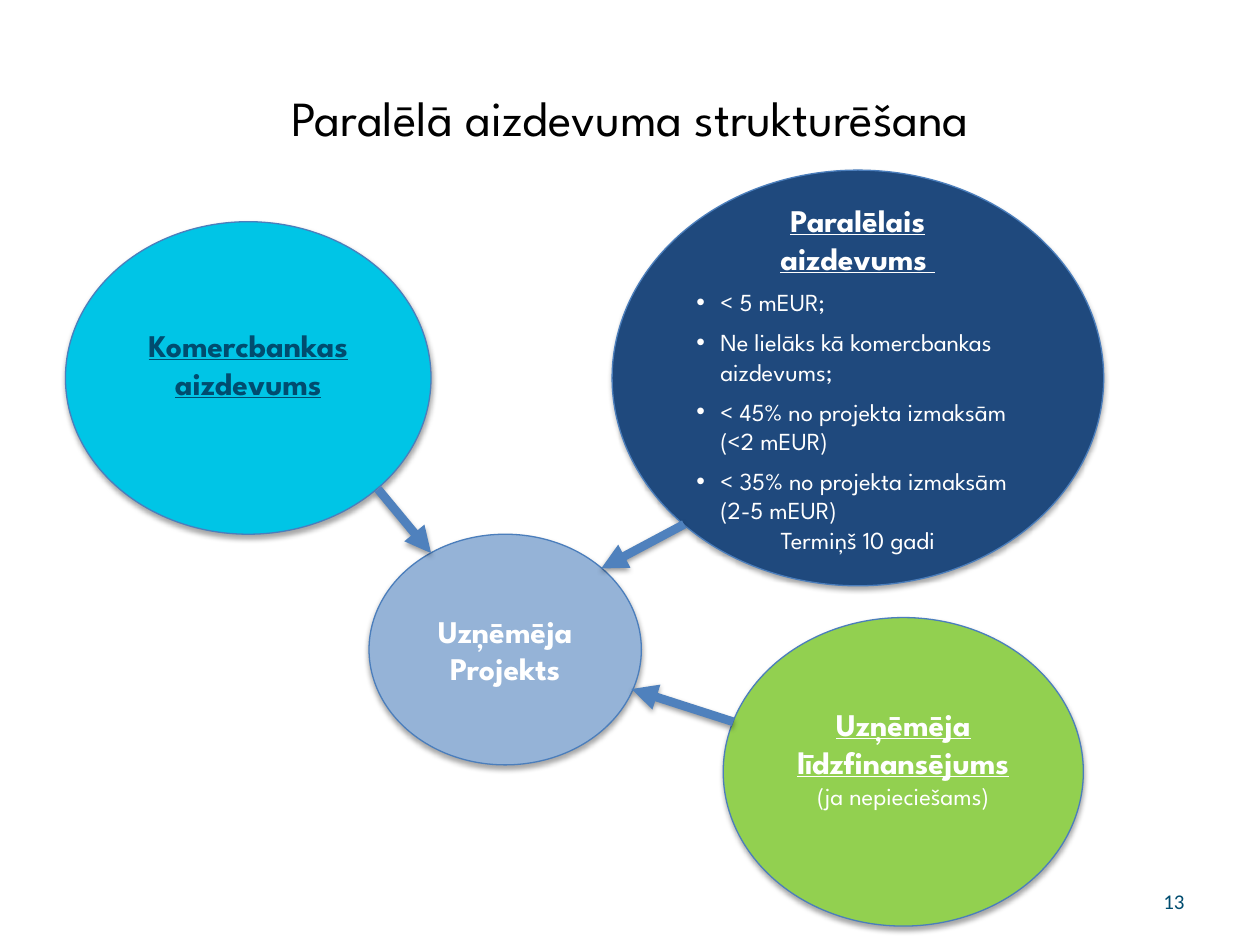
"""Build the slide showing how a parallel loan is structured."""
from lxml.etree import SubElement
from pptx import Presentation
from pptx.dml.color import RGBColor
from pptx.enum.shapes import MSO_CONNECTOR, MSO_SHAPE
from pptx.enum.text import MSO_ANCHOR, PP_ALIGN
from pptx.oxml.ns import qn
from pptx.util import Cm, Pt

BLACK = RGBColor(0x00, 0x00, 0x00)
WHITE = RGBColor(0xFF, 0xFF, 0xFF)
TEAL = RGBColor(0x00, 0x4C, 0x6F)
CYAN = RGBColor(0x00, 0xC5, 0xE6)
NAVY = RGBColor(0x1F, 0x49, 0x7D)
GREEN = RGBColor(0x92, 0xD0, 0x50)
PALE_BLUE = RGBColor(0x95, 0xB3, 0xD7)
OUTLINE = RGBColor(0x4B, 0x7E, 0xBC)
ARROW = RGBColor(0x4F, 0x81, 0xBD)


def style(span, size, color, bold=False, underline=False, name="League Spartan"):
    span.font.name = name
    span.font.size = Pt(size)
    span.font.color.rgb = color
    span.font.bold = bold
    span.font.underline = underline


def add_shadow(shape, opacity, distance):
    effects = SubElement(shape._element.spPr, qn("a:effectLst"))
    shadow = SubElement(effects, qn("a:outerShdw"), blurRad=str(Pt(3.1)),
                        dist=str(Pt(distance)), dir="5400000", rotWithShape="0")
    color = SubElement(shadow, qn("a:srgbClr"), val="000000")
    SubElement(color, qn("a:alpha"), val=str(opacity * 1000))


deck = Presentation()
deck.slide_width, deck.slide_height = Cm(25.4), Cm(19.05)
page = deck.slides.add_slide(deck.slide_layouts[6])

labels = [
    ("Paralēlā aizdevuma strukturēšana", (1.27, 0.76, 22.86, 3.18),
     PP_ALIGN.CENTER, 28, BLACK, "League Spartan"),
    ("13", (18.21, 17.65, 5.92, 1.02), PP_ALIGN.RIGHT, 12, TEAL, "Calibri"),
]
for text, place, alignment, size, color, font_name in labels:
    box = page.shapes.add_textbox(*map(Cm, place))
    box.text_frame.word_wrap = True
    box.text_frame.vertical_anchor = MSO_ANCHOR.MIDDLE
    para = box.text_frame.paragraphs[0]
    para.text = text
    para.alignment = alignment
    style(para.runs[0], size, color, name=font_name)

ellipses = [
    ("Komercbankas aizdevums", (1.32, 4.47, 7.37, 6.3), CYAN, TEAL, True, 0.7),
    ("Paralēlais\naizdevums ", (12.34, 3.43, 9.91, 8.38), NAVY, WHITE, True, 0.13),
    ("Uzņēmēja līdzfinansējums ", (14.58, 12.45, 7.26, 6.22), GREEN, WHITE, True, 0.7),
    ("Uzņēmēja Projekts", (7.44, 10.77, 5.49, 4.65), PALE_BLUE, WHITE, False, 0.13),
]
frames = []
for text, place, fill, color, underline, bottom in ellipses:
    ellipse = page.shapes.add_shape(MSO_SHAPE.OVAL, *map(Cm, place))
    ellipse.fill.solid()
    ellipse.fill.fore_color.rgb = fill
    ellipse.line.color.rgb = OUTLINE
    ellipse.line.width = Pt(0.75)
    add_shadow(ellipse, 35, 1.8)
    frame = ellipse.text_frame
    frame.word_wrap = True
    frame.vertical_anchor = MSO_ANCHOR.MIDDLE
    frame.margin_bottom = Cm(bottom)
    frame.text = text
    for para in frame.paragraphs:
        para.alignment = PP_ALIGN.CENTER
        style(para.runs[0], 18, color, True, underline)
    frames.append(frame)

bank, parallel, cofinancing, project = frames
span = cofinancing.paragraphs[0].add_run()
span.text = "(ja nepieciešams)"
style(span, 14, WHITE)

conditions = [
    "< 5 mEUR;",
    "Ne lielāks kā komercbankas aizdevums;",
    "< 45% no projekta izmaksām (<2 mEUR)",
    "< 35% no projekta izmaksām (2-5 mEUR)",
]
for condition in conditions:
    para = parallel.add_paragraph()
    para.text = condition
    properties = para._p.get_or_add_pPr()
    properties.set("marL", str(Cm(0.48)))
    properties.set("indent", str(-Cm(0.48)))
    SubElement(properties, qn("a:buFont"), typeface="Arial")
    SubElement(properties, qn("a:buChar"), char="•")
    para.alignment = PP_ALIGN.LEFT
    para.space_before = Pt(6)
    style(para.runs[0], 14, WHITE)

term = parallel.add_paragraph()
term.text = "Termiņš 10 gadi"
term.alignment = PP_ALIGN.CENTER
style(term.runs[0], 14, WHITE)

arrows = [
    (7.62, 9.86, 8.69, 11.15),
    (13.79, 10.57, 12.12, 11.46),
    (14.78, 14.55, 12.73, 13.89),
]
for ends in arrows:
    arrow = page.shapes.add_connector(MSO_CONNECTOR.STRAIGHT, *map(Cm, ends))
    arrow.line.color.rgb = ARROW
    arrow.line.width = Pt(5)
    SubElement(arrow.line._get_or_add_ln(), qn("a:tailEnd"), type="triangle")
    add_shadow(arrow, 38, 1.6)

deck.save("out.pptx")
